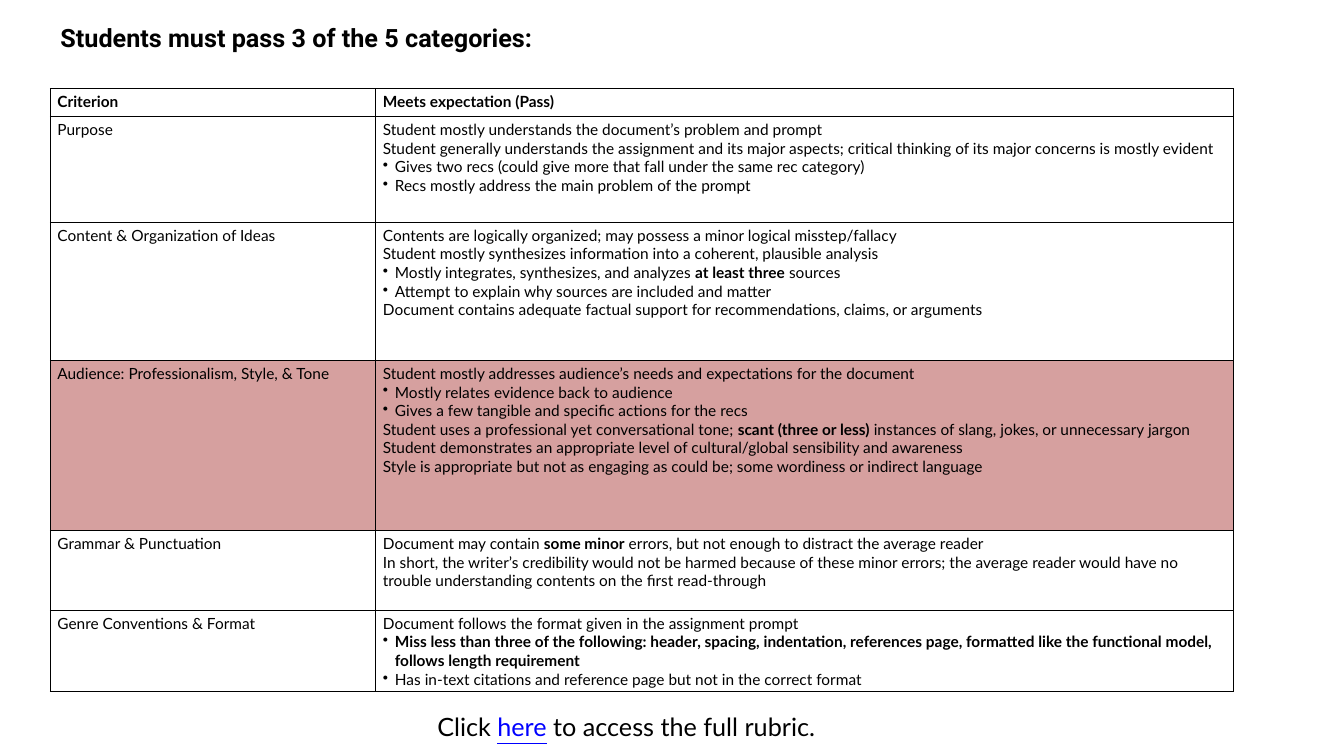
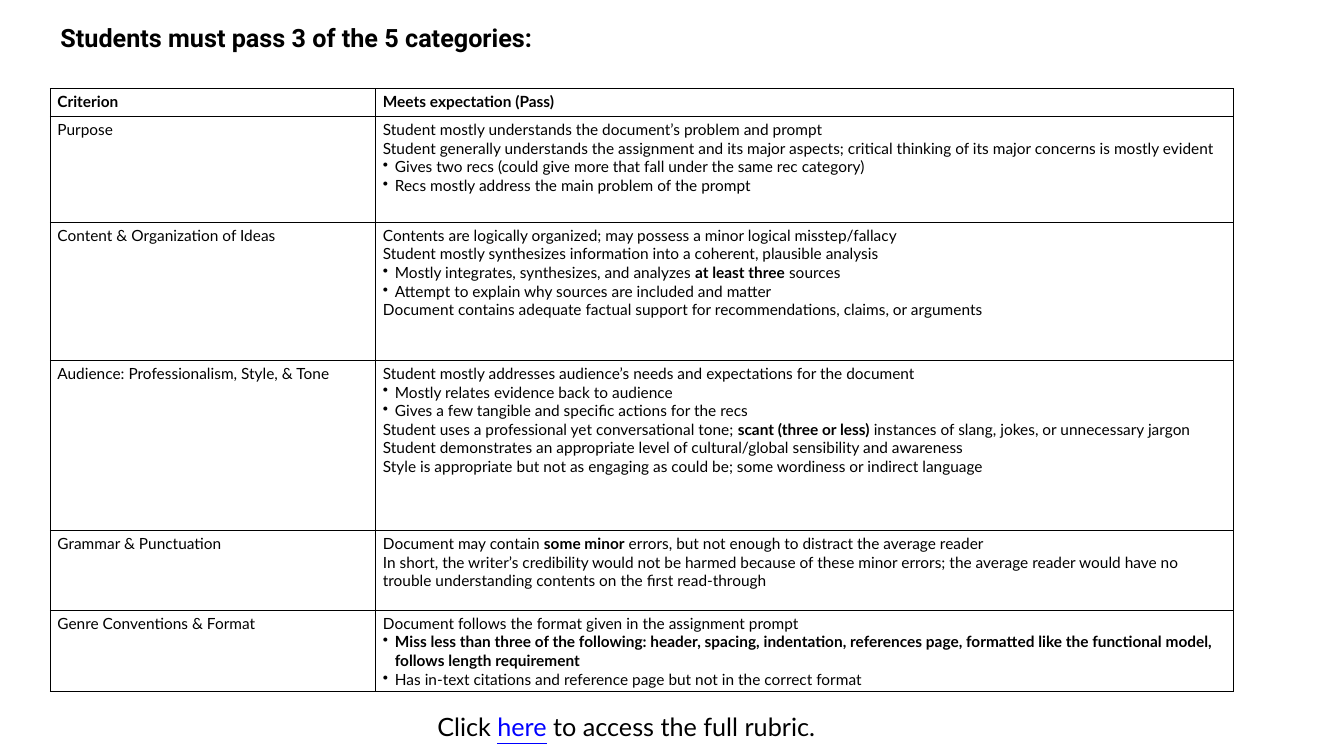
"""Build two slides with the pass rubric, the first marking one criterion."""
from lxml import etree
from pptx import Presentation
from pptx import util as u
from pptx.dml.color import RGBColor
from pptx.enum import text
from pptx.oxml.ns import qn

BLACK, LINK_BLUE, MARKED_ROSE = "000000", "0000FF", "D6A09F"
TITLE_FONT, BODY_FONT = "Roboto", "Lato"
TITLE_SIZE, TABLE_SIZE = 18, 11
BULLET, BOLD_MARK = "• ", "**"
BULLET_INDENT = 8.6

TITLE = "Students must pass 3 of the 5 categories:"
RUBRIC_NOTE = ("Click ", "here", " to access the full rubric.")
AUDIENCE = "Audience: Professionalism, Style, & Tone"
COLUMN_WIDTHS = (232.5, 612.5)
RUBRIC = [
    ("**Criterion**", 20, ["**Meets expectation (Pass)**"]),
    ("Purpose", 75.6, [
        "Student mostly understands the document’s problem and prompt",
        "Student generally understands the assignment and its major aspects; "
        "critical thinking of its major concerns is mostly evident",
        "• Gives two recs (could give more that fall under the same rec category)",
        "• Recs mostly address the main problem of the prompt",
    ]),
    ("Content & Organization of Ideas", 98.6, [
        "Contents are logically organized; may possess a minor logical misstep/fallacy",
        "Student mostly synthesizes information into a coherent, plausible analysis",
        "• Mostly integrates, synthesizes, and analyzes **at least three** sources",
        "• Attempt to explain why sources are included and matter",
        "Document contains adequate factual support for recommendations, claims, or arguments",
    ]),
    (AUDIENCE, 121.6, [
        "Student mostly addresses audience’s needs and expectations for the document",
        "• Mostly relates evidence back to audience",
        "• Gives a few tangible and specific actions for the recs",
        "Student uses a professional yet conversational tone; **scant (three or less)** "
        "instances of slang, jokes, or unnecessary jargon",
        "Student demonstrates an appropriate level of cultural/global sensibility and awareness",
        "Style is appropriate but not as engaging as could be; some wordiness or indirect language",
    ]),
    ("Grammar & Punctuation", 57, [
        "Document may contain **some minor** errors, but not enough to distract the average reader",
        "In short, the writer’s credibility would not be harmed because of these minor errors; "
        "the average reader would have no trouble understanding contents on the first read-through",
    ]),
    ("Genre Conventions & Format", 58, [
        "Document follows the format given in the assignment prompt",
        "• **Miss less than three of the following: header, spacing, indentation, references page, "
        "formatted like the functional model, follows length requirement**",
        "• Has in-text citations and reference page but not in the correct format",
    ]),
]
MARKED_CRITERIA = (AUDIENCE, None)


def rgb(value):
    """Turn a hex string into a colour."""
    return RGBColor.from_string(value)


def style(font, name, size, bold=None):
    """Set a black font with the given face, size and weight."""
    font.name, font.size, font.bold = name, u.Pt(size), bold
    font.color.rgb = rgb(BLACK)


def add_bullet(paragraph):
    """Give the paragraph a hanging bullet."""
    properties = paragraph._p.get_or_add_pPr()
    properties.set("marL", str(u.Pt(BULLET_INDENT)))
    properties.set("indent", str(-u.Pt(BULLET_INDENT)))
    etree.SubElement(properties, qn("a:buChar"), char=BULLET.strip())


def write_line(paragraph, line):
    """Write one table line, with its bullet and bold parts."""
    if line.startswith(BULLET):
        add_bullet(paragraph)
        line = line[len(BULLET):]
    parts = [(part, index % 2 == 1)
             for index, part in enumerate(line.split(BOLD_MARK)) if part]
    style(paragraph.font, BODY_FONT, TABLE_SIZE, parts[0][1])
    for part, bold in parts:
        run = paragraph.add_run()
        run.text = part
        if bold != parts[0][1]:
            run.font.bold = bold


def add_borders(cell):
    """Draw a thin black line on all four sides of a cell."""
    properties = cell._tc.get_or_add_tcPr()
    for side in ("lnL", "lnR", "lnT", "lnB"):
        line = etree.SubElement(properties, qn(f"a:{side}"), w=str(u.Pt(0.75)))
        fill = etree.SubElement(line, qn("a:solidFill"))
        etree.SubElement(fill, qn("a:srgbClr"), val=BLACK)


def fill_cell(cell, lines, marked):
    """Fill one cell with its lines, borders and background."""
    cell.margin_left = cell.margin_right = u.Pt(5)
    cell.margin_top = cell.margin_bottom = u.Pt(2.7)
    add_borders(cell)
    if marked:
        cell.fill.solid()
        cell.fill.fore_color.rgb = rgb(MARKED_ROSE)
    else:
        cell.fill.background()
    frame = cell.text_frame
    for index, line in enumerate(lines):
        write_line(frame.add_paragraph() if index else frame.paragraphs[0], line)


def fit_frame(frame):
    """Let a single-line text box grow with its text."""
    frame.word_wrap = False
    frame.auto_size = text.MSO_AUTO_SIZE.SHAPE_TO_FIT_TEXT
    frame.vertical_anchor = text.MSO_ANCHOR.TOP


def add_title(slide):
    """Place and format the title."""
    title = slide.shapes.title
    title.left, title.top, title.width, title.height = map(u.Pt, (36, 12.2, 374, 29))
    title.text_frame.text = TITLE
    fit_frame(title.text_frame)
    heading = title.text_frame.paragraphs[0]
    heading.alignment = text.PP_ALIGN.LEFT
    style(heading.font, TITLE_FONT, TITLE_SIZE, True)


def add_rubric(slide, marked_criterion):
    """Add the rubric table."""
    height = sum(row_height for _, row_height, _ in RUBRIC)
    rubric = slide.shapes.add_table(
        len(RUBRIC), len(COLUMN_WIDTHS), u.Pt(36), u.Pt(63.2),
        u.Pt(sum(COLUMN_WIDTHS)), u.Pt(height)).table
    rubric.first_row = rubric.horz_banding = False
    for column, width in zip(rubric.columns, COLUMN_WIDTHS):
        column.width = u.Pt(width)
    for row, (criterion, row_height, expectations) in zip(rubric.rows, RUBRIC):
        row.height = u.Pt(row_height)
        for cell, lines in zip(row.cells, ([criterion], expectations)):
            fill_cell(cell, lines, criterion == marked_criterion)


def add_rubric_note(slide):
    """Add the line that points to the full rubric."""
    note = slide.shapes.add_textbox(*map(u.Pt, (305.3, 504.7, 288, 29)))
    fit_frame(note.text_frame)
    paragraph = note.text_frame.paragraphs[0]
    style(paragraph.font, BODY_FONT, TITLE_SIZE)
    before, here, after = (paragraph.add_run() for _ in RUBRIC_NOTE)
    before.text, here.text, after.text = RUBRIC_NOTE
    here.font.color.rgb = rgb(LINK_BLUE)
    here.font.underline = True


def main():
    """Build and save the deck."""
    deck = Presentation()
    deck.slide_width, deck.slide_height = u.Pt(960), u.Pt(540)
    for marked_criterion in MARKED_CRITERIA:
        slide = deck.slides.add_slide(deck.slide_layouts[5])
        add_title(slide)
        add_rubric(slide, marked_criterion)
        add_rubric_note(slide)
    deck.save("out.pptx")


if __name__ == "__main__":
    main()
